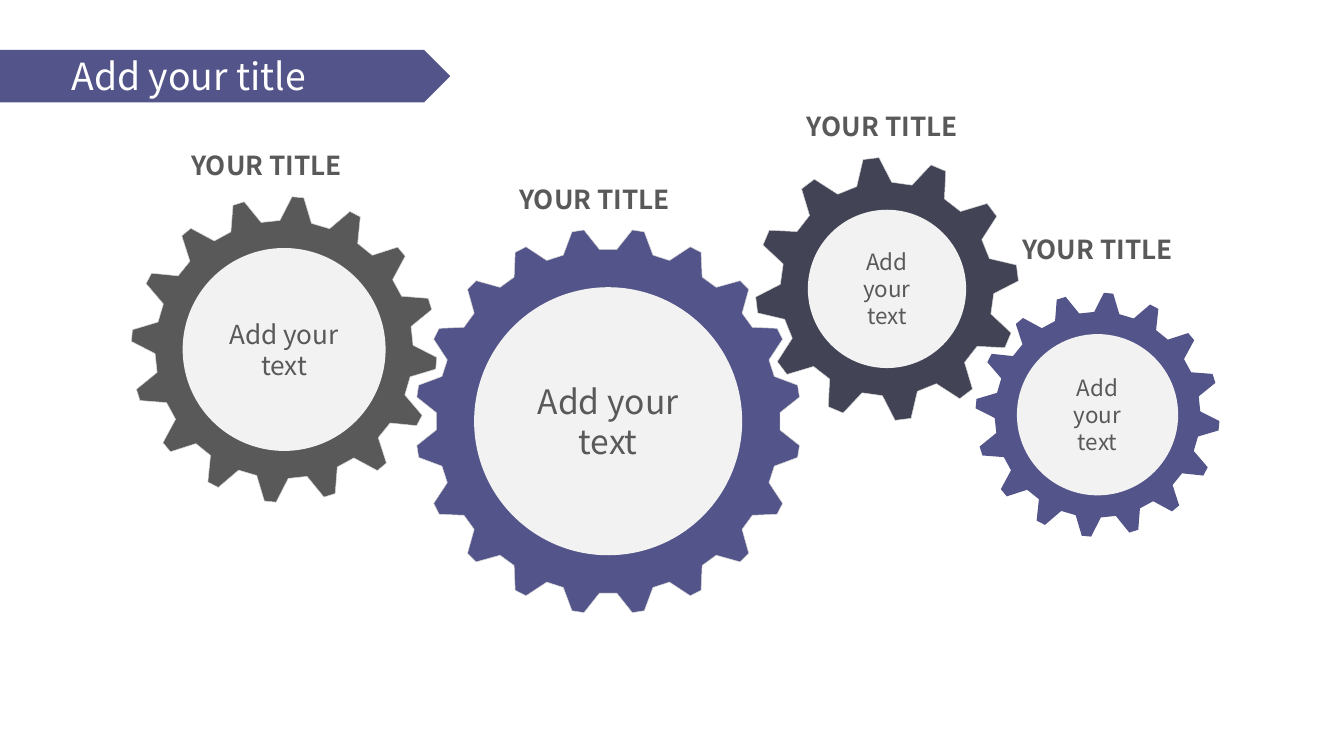
from math import cos, radians, sin

from pptx import Presentation
from pptx import util as u
from pptx.dml.color import RGBColor
from pptx.enum import shapes, text

Pt = u.Pt
FONT = "Noto Sans CJK JP"
VIOLET, NAVY, GRAY = "53548A", "424456", "595959"
TEXT_GRAY, PALE, EDGE, WHITE = "5A5959", "F2F2F2", "D7D7D7", "FFFFFF"

GEARS = [
    {"box": (222.5, 122.4, 206.6), "root": 92.2, "teeth": 20, "phase": 9,
     "tip": 1.8, "base": 6.1, "hub": 143.6, "color": VIOLET, "edge": EDGE,
     "size": 18, "label": (250.6, 95, 136)},
    {"box": (404.7, 84.3, 141), "root": 57.2, "teeth": 12, "phase": -7,
     "tip": 3.5, "base": 9.5, "hub": 84.8, "color": NAVY, "edge": EDGE,
     "size": 12, "label": (404.7, 55.4, 136)},
    {"box": (70.3, 105.3, 163.8), "root": 69.1, "teeth": 16, "phase": 5.2,
     "tip": 2.2, "base": 7.05, "hub": 108.7, "color": GRAY, "edge": EDGE,
     "size": 14, "label": (74.9, 76.3, 136)},
    {"box": (522.6, 156.8, 130.8), "root": 55.1, "teeth": 16, "phase": 5.2,
     "tip": 2.2, "base": 7.05, "hub": 86.4, "color": VIOLET, "edge": None,
     "size": 12, "label": (528.5, 121.7, 119)},
]


def rgb(value):
    """Turn a hex string into a colour."""
    return RGBColor.from_string(value)


def apply_format(target, values):
    """Set each attribute named in values on target."""
    for name, value in values.items():
        setattr(target, name, value)


def paint(shape, fill, edge=None):
    """Fill a shape flat, with an optional hairline edge."""
    shape.shadow.inherit = False
    shape.fill.solid()
    shape.fill.fore_color.rgb = rgb(fill)
    if edge:
        shape.line.color.rgb = rgb(edge)
        shape.line.width = Pt(0.25)
    else:
        shape.line.fill.background()


def write(shape, wording, size, color, align, bold=False, spacing=None):
    """Write one wrapped, vertically centred paragraph in a shape."""
    frame = shape.text_frame
    apply_format(frame, {"word_wrap": True, "auto_size": text.MSO_AUTO_SIZE.NONE,
                         "vertical_anchor": text.MSO_ANCHOR.MIDDLE})
    paragraph = frame.paragraphs[0]
    apply_format(paragraph, {"alignment": align, "line_spacing": spacing})
    run = paragraph.add_run()
    run.text = wording
    apply_format(run.font, {"name": FONT, "size": Pt(size), "bold": bold})
    run.font.color.rgb = rgb(color)


def add_banner(slide, left, top, width, height):
    """Place the arrow banner with the slide title on it."""
    banner = slide.shapes.add_shape(shapes.MSO_SHAPE.PENTAGON, Pt(left), Pt(top),
                                    Pt(width), Pt(height))
    paint(banner, VIOLET)
    title = slide.shapes.title
    apply_format(title, {"left": Pt(left + 31), "top": Pt(top - 3),
                         "width": Pt(194.4), "height": Pt(33.8)})
    write(title, "Add your title", 20, WHITE, text.PP_ALIGN.LEFT)
    banner.element.addnext(title.element)


def gear_outline(center_x, center_y, radius, gear):
    """List the corner points of a gear, four for each tooth."""
    corners = [(-gear["base"], gear["root"]), (-gear["tip"], radius),
               (gear["tip"], radius), (gear["base"], gear["root"])]
    points = []
    for tooth in range(gear["teeth"]):
        middle = gear["phase"] + tooth * 360 / gear["teeth"]
        for offset, reach in corners:
            angle = radians(middle + offset)
            points.append((Pt(center_x + reach * cos(angle)),
                           Pt(center_y + reach * sin(angle))))
    return points


def add_gear(slide, left, top, size, gear):
    """Place a toothed wheel with a round text hub in a square box."""
    radius = size / 2
    center_x, center_y = left + radius, top + radius
    points = gear_outline(center_x, center_y, radius, gear)
    builder = slide.shapes.build_freeform(*points[0])
    builder.add_line_segments(points[1:], close=True)
    paint(builder.convert_to_shape(), gear["color"], gear["edge"])
    hub = slide.shapes.add_shape(
        shapes.MSO_SHAPE.OVAL, Pt(center_x - gear["hub"] / 2),
        Pt(center_y - gear["hub"] / 2), Pt(gear["hub"]), Pt(gear["hub"]))
    paint(hub, PALE)
    write(hub, "Add your text", gear["size"], TEXT_GRAY, text.PP_ALIGN.CENTER)


def add_label(slide, left, top, width):
    """Place the bold heading above a gear."""
    label = slide.shapes.add_textbox(Pt(left), Pt(top), Pt(width), Pt(23.8))
    write(label, "YOUR TITLE", 14, TEXT_GRAY, text.PP_ALIGN.CENTER, bold=True)


def main():
    """Build and save the presentation."""
    presentation = Presentation()
    apply_format(presentation, {"slide_width": Pt(720), "slide_height": Pt(405)})
    slide = presentation.slides.add_slide(presentation.slide_layouts[5])
    add_banner(slide, 0, 26.7, 241.2, 28.2)
    for gear in GEARS:
        add_gear(slide, *gear["box"], gear)
        add_label(slide, *gear["label"])
    presentation.save("out.pptx")


if __name__ == "__main__":
    main()
